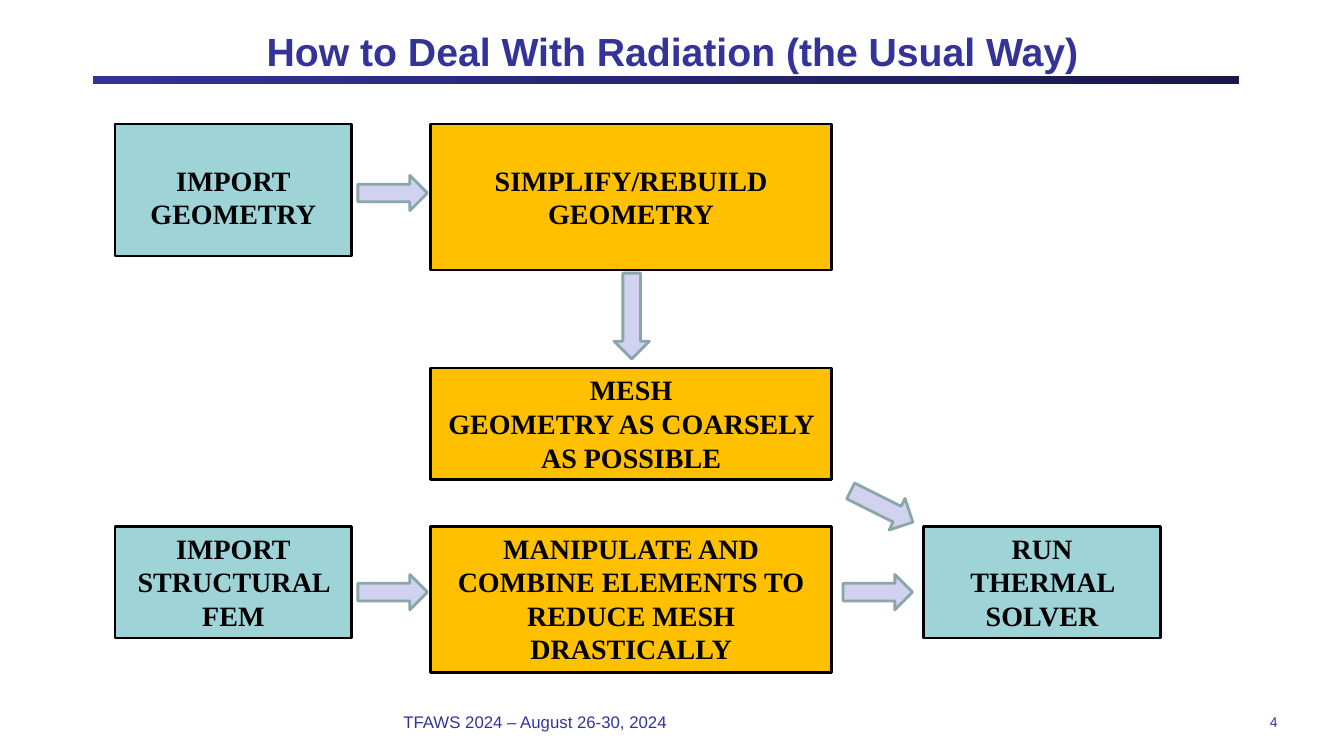
from pptx import Presentation
from pptx.dml.color import RGBColor as RGB
from pptx.enum.shapes import MSO_SHAPE as Shape
from pptx.enum.text import MSO_ANCHOR as Anchor, PP_ALIGN as Align
from pptx.util import Inches, Pt

COLORS = {
    "navy": "333399",
    "midnight": "181848",
    "teal": "9ED3D7",
    "amber": "FFC000",
    "lavender": "D1D1F0",
    "sage": "8AA6A8",
    "black": "000000",
}

# Flowchart grid, in percent of the slide's width and height: (start, size)
COLUMNS = {"import": (8.55, 17.63), "prepare": (32.03, 29.86), "solve": (68.72, 17.63)}
ROWS = {"geometry": 16.4, "mesh": 48.67, "elements": 69.6}
ARROW_LEFT = {"import": 26.63, "prepare": 62.72}
ARROW_WIDTH, ARROW_HEIGHT = 5.18, 4.67
BLANK_LAYOUT = 6


def color(name):
    return RGB.from_string(COLORS[name])


def write(shape, text, *, size, font="Arial", ink="navy", bold=False,
          align=Align.LEFT, anchor=Anchor.MIDDLE, margins=(0, 0, 0, 0)):
    """Write one paragraph per line of text; margins are left, top, right, bottom in inches."""
    frame = shape.text_frame
    frame.word_wrap = True
    frame.vertical_anchor = anchor
    (frame.margin_left, frame.margin_top,
     frame.margin_right, frame.margin_bottom) = map(Inches, margins)
    frame.text = text
    for paragraph in frame.paragraphs:
        paragraph.alignment = align
        paragraph.font.size = Pt(size)
        paragraph.font.name = font
        paragraph.font.bold = bold
        paragraph.font.color.rgb = color(ink)


class SlideBuilder:
    """Holds the slide and draws elements placed in percent of its size."""

    def __init__(self, presentation):
        self.width = presentation.slide_width
        self.height = presentation.slide_height
        self.slide = presentation.slides.add_slide(presentation.slide_layouts[BLANK_LAYOUT])

    def place(self, left, top, width, height):
        return (round(self.width * left / 100), round(self.height * top / 100),
                round(self.width * width / 100), round(self.height * height / 100))

    def label(self, area, text, **style):
        write(self.slide.shapes.add_textbox(*self.place(*area)), text, **style)

    def shape(self, kind, area, fill, line):
        shape = self.slide.shapes.add_shape(kind, *self.place(*area))
        shape.shadow.inherit = False
        shape.fill.solid()
        shape.fill.fore_color.rgb = color(fill)
        shape.line.color.rgb = color(line)
        shape.line.width = Pt(2)
        return shape

    def rule(self, area, start, end):
        bar = self.slide.shapes.add_shape(Shape.RECTANGLE, *self.place(*area))
        bar.shadow.inherit = False
        bar.line.fill.background()
        bar.fill.gradient()
        bar.fill.gradient_angle = 0
        for stop, name, position in zip(bar.fill.gradient_stops, (start, end), (0, 1)):
            stop.color.rgb = color(name)
            stop.position = position

    def step(self, column, row, height, text, fill, text_top=0.05):
        left, width = COLUMNS[column]
        box = self.shape(Shape.RECTANGLE, (left, ROWS[row], width, height), fill, "black")
        write(box, text, size=20, font="Times New Roman", ink="black", bold=True,
              align=Align.CENTER, anchor=Anchor.TOP, margins=(0.1, text_top, 0.1, 0.05))

    def arrow(self, left, top, width=ARROW_WIDTH, rotation=0):
        arrow = self.shape(Shape.RIGHT_ARROW, (left, top, width, ARROW_HEIGHT),
                           "lavender", "sage")
        arrow.rotation = rotation


def main():
    presentation = Presentation()
    presentation.slide_width = Inches(13.33)
    presentation.slide_height = Inches(7.5)
    builder = SlideBuilder(presentation)

    # Heading and footer
    builder.rule((6.9, 10, 85.3, 1.07), "navy", "midnight")
    builder.label((5.03, 2.8, 90.02, 7.73), "How to Deal With Radiation (the Usual Way)",
                  size=28, bold=True, align=Align.CENTER, margins=(0.1, 0, 0.1, 0))
    builder.label((74.19, 93.33, 20.86, 4.4), "4", size=10, align=Align.RIGHT)
    builder.label((30.01, 93.33, 39.98, 4.4), "TFAWS 2024 – August 26-30, 2024", size=12)

    # Geometry row, with text one line lower
    builder.step("import", "geometry", 17.47, "IMPORT\nGEOMETRY", "teal", text_top=0.39)
    builder.step("prepare", "geometry", 19.33, "SIMPLIFY/REBUILD GEOMETRY", "amber",
                 text_top=0.39)

    # Mesh row
    builder.step("prepare", "mesh", 14.8, "MESH\nGEOMETRY AS COARSELY AS POSSIBLE", "amber")

    # Elements row
    builder.step("import", "elements", 14.8, "IMPORT\nSTRUCTURAL FEM", "teal")
    builder.step("prepare", "elements", 19.33,
                 "MANIPULATE AND COMBINE ELEMENTS TO REDUCE MESH DRASTICALLY", "amber")
    builder.step("solve", "elements", 14.8, "RUN\nTHERMAL SOLVER", "teal")

    # Arrows between steps
    builder.arrow(ARROW_LEFT["import"], 23.2)
    builder.arrow(43.81, 39.47, width=6.38, rotation=90)
    builder.arrow(63.02, 64.67, rotation=26.6)
    for left in ARROW_LEFT.values():
        builder.arrow(left, 76)

    presentation.save("out.pptx")


if __name__ == "__main__":
    main()
